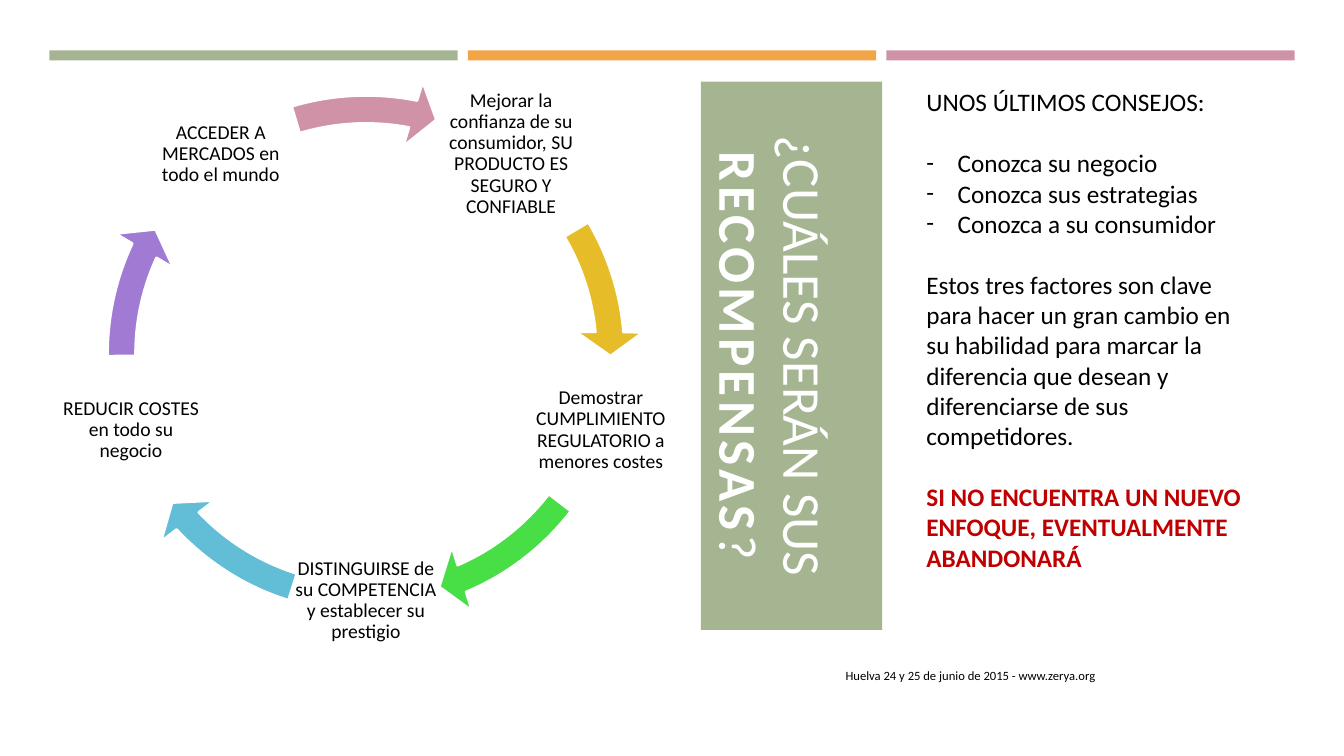
from dataclasses import dataclass
from math import cos, radians, sin

from lxml import etree
from pptx import Presentation
from pptx.dml.color import RGBColor
from pptx.enum.shapes import MSO_SHAPE
from pptx.enum.text import MSO_ANCHOR, MSO_AUTO_SIZE, PP_ALIGN
from pptx.oxml.ns import qn
from pptx.util import Inches, Pt

RECTANGLE = MSO_SHAPE.RECTANGLE
CIRCULAR_ARROW = MSO_SHAPE.CIRCULAR_ARROW
TOP, MIDDLE, BOTTOM = MSO_ANCHOR.TOP, MSO_ANCHOR.MIDDLE, MSO_ANCHOR.BOTTOM
LEFT, CENTER, RIGHT = PP_ALIGN.LEFT, PP_ALIGN.CENTER, PP_ALIGN.RIGHT
NO_AUTOFIT = MSO_AUTO_SIZE.NONE


@dataclass(frozen=True)
class Theme:
    font: str = "Calibri"
    green: str = "A5B592"
    orange: str = "F3A447"
    pink: str = "D092A7"
    gold: str = "E7BC29"
    lime: str = "47DE46"
    blue: str = "62BED7"
    purple: str = "A17BD3"
    white: str = "FFFFFF"
    black: str = "000000"
    red: str = "C00000"
    title_size: int = 38
    advice_size: int = 18
    reward_size: int = 14
    footer_size: int = 9
    advice_gap: int = 22


THEME = Theme()

TITLE = ("¿CUÁLES SERÁN SUS ", "RECOMPENSAS", "?")
FOOTER = "Huelva 24 y 25 de junio de 2015 - www.zerya.org"
BAR_COLORS = (THEME.green, THEME.orange, THEME.pink)

REWARDS = [
    ("Mejorar la confianza de su consumidor, SU PRODUCTO ES SEGURO Y CONFIABLE",
     THEME.gold, 329.42, 354.9),
    ("Demostrar CUMPLIMIENTO REGULATORIO a menores costes",
     THEME.lime, 37.54, 66.93),
    ("DISTINGUIRSE de su COMPETENCIA y establecer su prestigio",
     THEME.blue, 107.48, 136.86),
    ("REDUCIR COSTES en todo su negocio", THEME.purple, 179.5, 204.98),
    ("ACCEDER A MERCADOS en todo el mundo", THEME.pink, 253.3, 281.11),
]

ADVICE = [
    ("UNOS ÚLTIMOS CONSEJOS:", "heading"),
    ("Conozca su negocio", "first bullet"),
    ("Conozca sus estrategias", "bullet"),
    ("Conozca a su consumidor", "bullet"),
    ("Estos tres factores son clave para hacer un gran cambio en su habilidad "
     "para marcar la diferencia que desean y diferenciarse de sus competidores.",
     "body"),
    ("SI NO ENCUENTRA UN NUEVO ENFOQUE, EVENTUALMENTE ABANDONARÁ", "warning"),
]

BAR_LEFT, BAR_TOP, BAR_WIDTH, BAR_HEIGHT, BAR_STEP = 0.49, 0.5, 4.05, 0.1, 4.15
RING_X, RING_Y, RING_RADIUS, RING_SIZE = 3.63, 3.51, 2.45, 5.51
REWARD_SIZE, REWARD_INSET = 1.47, 0.02
TITLE_X, TITLE_Y, TITLE_LENGTH, TITLE_DEPTH = 7.85, 3.53, 5.44, 1.8


def style(paragraph, size, color=THEME.black, align=LEFT, bold=False):
    paragraph.alignment = align
    font = paragraph.font
    font.name, font.size, font.bold = THEME.font, Pt(size), bold
    font.color.rgb = RGBColor.from_string(color)


def add_filled(slide, preset, box, color):
    shape = slide.shapes.add_shape(preset, *map(Inches, box))
    shape.shadow.inherit = False
    shape.fill.solid()
    shape.fill.fore_color.rgb = RGBColor.from_string(color)
    shape.line.fill.background()
    return shape


def add_text_frame(slide, box, anchor):
    frame = slide.shapes.add_textbox(*map(Inches, box)).text_frame
    frame.word_wrap = True
    frame.vertical_anchor = anchor
    return frame


def add_bars(slide):
    for index, color in enumerate(BAR_COLORS):
        left = BAR_LEFT + index * BAR_STEP
        add_filled(slide, RECTANGLE, (left, BAR_TOP, BAR_WIDTH, BAR_HEIGHT), color)


def add_rewards(slide):
    ring_box = (RING_X - RING_SIZE / 2, RING_Y - RING_SIZE / 2, RING_SIZE, RING_SIZE)
    for index, (reward, color, start, end) in enumerate(REWARDS):
        angle = radians(-54 + index * 360 / len(REWARDS))
        left = RING_X + RING_RADIUS * cos(angle) - REWARD_SIZE / 2
        top = RING_Y + RING_RADIUS * sin(angle) - REWARD_SIZE / 2
        frame = add_text_frame(slide, (left, top, REWARD_SIZE, REWARD_SIZE), MIDDLE)
        frame.margin_left = frame.margin_right = Inches(REWARD_INSET)
        frame.margin_top = frame.margin_bottom = Inches(REWARD_INSET)
        paragraph = frame.paragraphs[0]
        paragraph.text = reward
        paragraph.line_spacing = 0.9
        style(paragraph, THEME.reward_size, align=CENTER)

        arrow = add_filled(slide, CIRCULAR_ARROW, ring_box, color)
        arrow.line.color.rgb = RGBColor.from_string(THEME.white)
        arrow.line.width = Pt(1.75)
        settings = (0.05, 3.36, end * 0.6, start * 0.6, 0.06)
        for position, setting in enumerate(settings):
            arrow.adjustments[position] = setting


def add_title(slide):
    title = slide.shapes.title
    title.left = Inches(TITLE_X - TITLE_LENGTH / 2)
    title.top = Inches(TITLE_Y - TITLE_DEPTH / 2)
    title.width, title.height = Inches(TITLE_LENGTH), Inches(TITLE_DEPTH)
    title.rotation = 90
    title.fill.solid()
    title.fill.fore_color.rgb = RGBColor.from_string(THEME.green)
    frame = title.text_frame
    frame.word_wrap = True
    frame.auto_size = NO_AUTOFIT
    frame.vertical_anchor = BOTTOM
    frame.margin_bottom = Inches(0.08)
    paragraph = frame.paragraphs[0]
    style(paragraph, THEME.title_size, THEME.white, CENTER)
    for part in TITLE:
        paragraph.add_run().text = part
    keyword = paragraph.runs[1]
    keyword.font.bold = True
    keyword.font._element.set("spc", "300")


def add_advice(slide):
    frame = add_text_frame(slide, (9.09, 0.81, 3.43, 5.25), TOP)
    for index, (advice, role) in enumerate(ADVICE):
        paragraph = frame.add_paragraph() if index else frame.paragraphs[0]
        paragraph.text = advice
        if role in ("first bullet", "body", "warning"):
            paragraph.space_before = Pt(THEME.advice_gap)
        if role.endswith("bullet"):
            properties = paragraph._p.get_or_add_pPr()
            properties.set("marL", str(Inches(0.31)))
            properties.set("indent", str(-Inches(0.31)))
            etree.SubElement(properties, qn("a:buFont")).set("typeface", THEME.font)
            etree.SubElement(properties, qn("a:buChar")).set("char", "-")
        warning = role == "warning"
        style(paragraph, THEME.advice_size,
              THEME.red if warning else THEME.black, bold=warning)


def add_footer(slide):
    frame = add_text_frame(slide, (7.85, 6.5, 3.11, 0.4), MIDDLE)
    paragraph = frame.paragraphs[0]
    paragraph.text = FOOTER
    style(paragraph, THEME.footer_size, align=RIGHT)


def main():
    deck = Presentation()
    deck.slide_width, deck.slide_height = Inches(13.33), Inches(7.5)
    slide = deck.slides.add_slide(deck.slide_layouts[5])
    add_bars(slide)
    add_footer(slide)
    add_rewards(slide)
    add_title(slide)
    add_advice(slide)
    deck.save("out.pptx")


if __name__ == "__main__":
    main()
